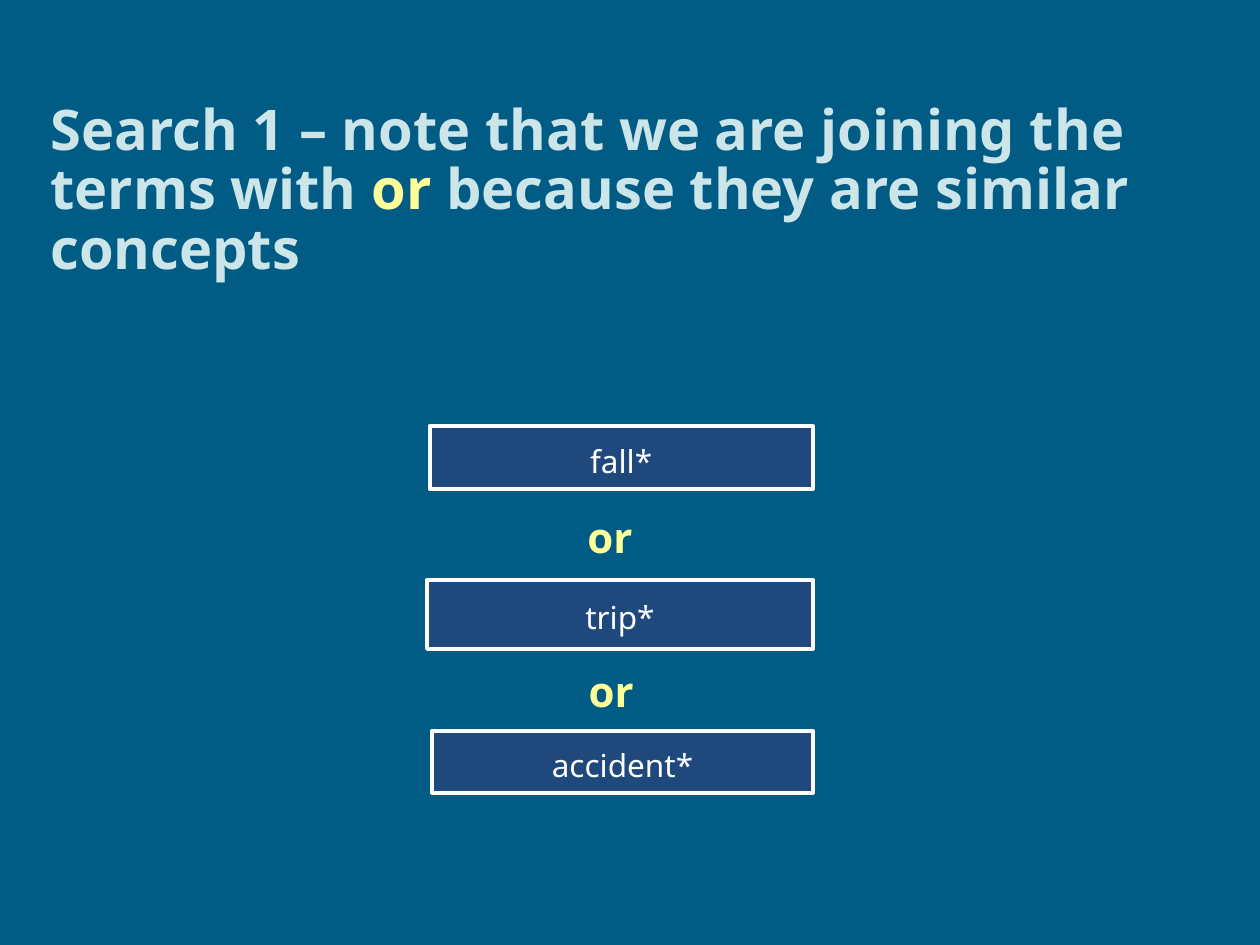
from dataclasses import dataclass

from pptx import Presentation
from pptx.dml.color import RGBColor
from pptx.enum.shapes import MSO_SHAPE
from pptx.enum.text import MSO_ANCHOR, PP_ALIGN
from pptx.slide import Slide
from pptx.text.text import TextFrame, _Paragraph
from pptx.util import Pt

FONT = "Noto Sans"
BACKGROUND = "005C84"
BOX_FILL = "1F497D"
WHITE = "FFFFFF"
PALE_BLUE = "CCE5E9"
YELLOW = "FFFF99"
BOX_RIGHT = 464.4


@dataclass(frozen=True)
class Label:
    text: str
    left: float
    top: float
    width: float
    height: float


TERMS = [
    Label("trip*", 244.1, 331.2, BOX_RIGHT - 244.1, 39.6),
    Label("fall*", 245.5, 243.4, BOX_RIGHT - 245.5, 36),
    Label("accident*", 247, 417.6, BOX_RIGHT - 247, 35.3),
]
OPERATORS = [
    Label("or", 312.5, 280.8, 72, 48.2),
    Label("or", 313.2, 368.6, 72, 48.2),
]
TITLE = [
    ("Search 1 – note that we are joining the terms with ", PALE_BLUE),
    ("or", YELLOW),
    (" because they are similar concepts", PALE_BLUE),
]


def color(value: str) -> RGBColor:
    return RGBColor.from_string(value)


def add_run(paragraph: _Paragraph, text: str, size: float, value: str, bold: bool) -> None:
    run = paragraph.add_run()
    run.text = text
    run.font.name = FONT
    run.font.size = Pt(size)
    run.font.bold = bold
    run.font.color.rgb = color(value)


def set_margins(frame: TextFrame, side: float, top: float) -> None:
    frame.word_wrap = True
    frame.margin_left = frame.margin_right = Pt(side)
    frame.margin_top = Pt(top)
    frame.margin_bottom = Pt(0)


def add_title(slide: Slide) -> None:
    shape = slide.shapes.add_textbox(Pt(28.8), Pt(54.7), Pt(663.8), Pt(105.8))
    frame = shape.text_frame
    set_margins(frame, 0, 0)
    frame.vertical_anchor = MSO_ANCHOR.BOTTOM
    paragraph = frame.paragraphs[0]
    paragraph.line_spacing = 0.88
    for text, value in TITLE:
        add_run(paragraph, text, 32, value, True)


def add_label(slide: Slide, label: Label, size: float, value: str, boxed: bool) -> None:
    shape = slide.shapes.add_shape(
        MSO_SHAPE.FLOWCHART_PROCESS,
        Pt(label.left), Pt(label.top), Pt(label.width), Pt(label.height),
    )
    shape.shadow.inherit = False
    if boxed:
        shape.fill.solid()
        shape.fill.fore_color.rgb = color(BOX_FILL)
        shape.line.color.rgb = color(WHITE)
        shape.line.width = Pt(2.25)
    else:
        shape.fill.background()
        shape.line.fill.background()
    frame = shape.text_frame
    set_margins(frame, 7.2, 3.6)
    frame.vertical_anchor = MSO_ANCHOR.MIDDLE
    paragraph = frame.paragraphs[0]
    paragraph.alignment = PP_ALIGN.CENTER
    add_run(paragraph, label.text, size, value, not boxed)


def main() -> None:
    presentation = Presentation()
    presentation.slide_width = Pt(720)
    presentation.slide_height = Pt(540)
    slide = presentation.slides.add_slide(presentation.slide_layouts[6])
    slide.background.fill.solid()
    slide.background.fill.fore_color.rgb = color(BACKGROUND)
    add_title(slide)
    for term in TERMS:
        add_label(slide, term, 18, WHITE, True)
    for operator in OPERATORS:
        add_label(slide, operator, 24, YELLOW, False)
    presentation.save("out.pptx")


if __name__ == "__main__":
    main()
